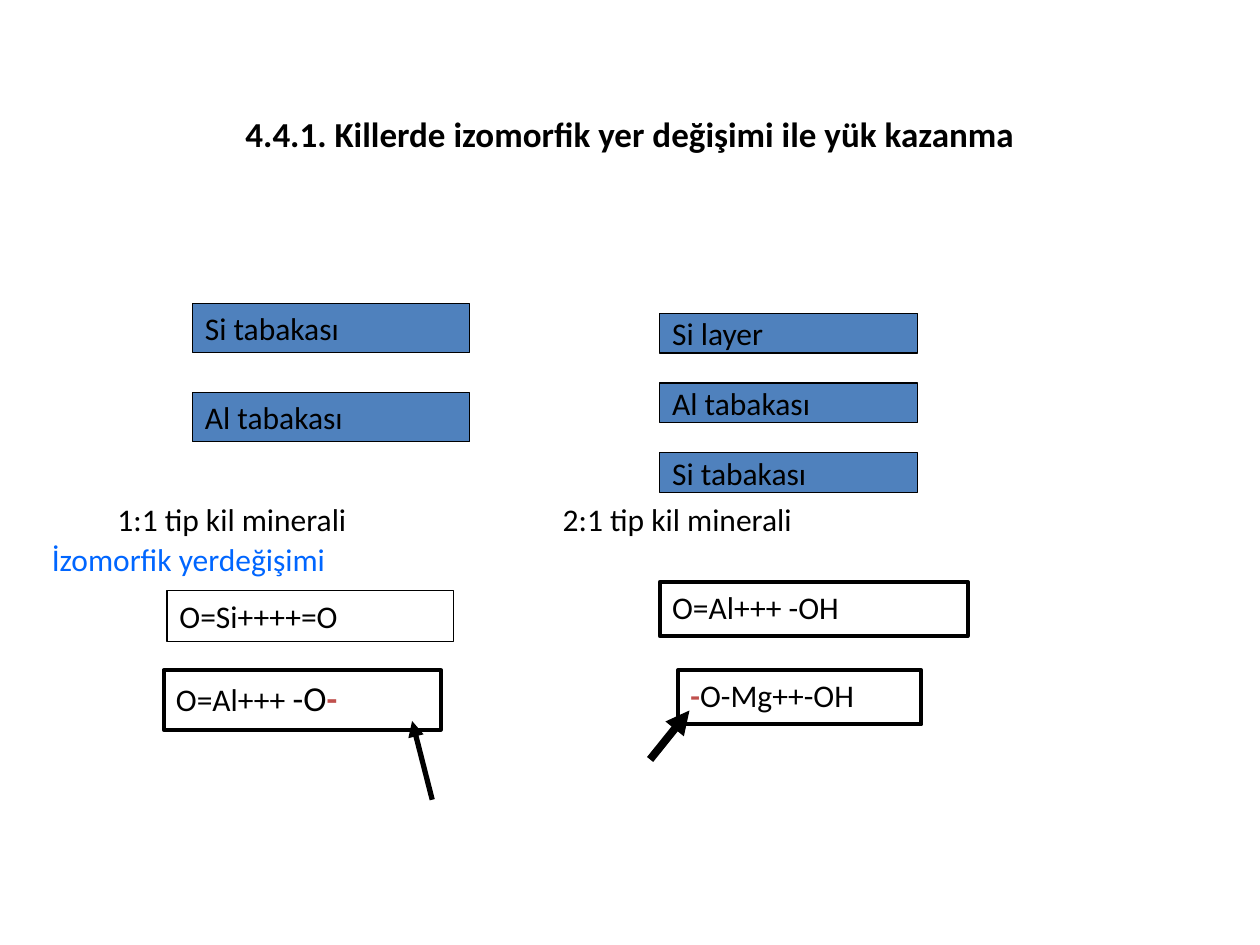
from lxml import etree
from pptx import Presentation
from pptx.dml.color import RGBColor
from pptx.enum.shapes import MSO_CONNECTOR, MSO_SHAPE
from pptx.enum.text import MSO_ANCHOR, PP_ALIGN
from pptx.oxml.ns import qn
from pptx.util import Pt

RECTANGLE = MSO_SHAPE.RECTANGLE
STRAIGHT = MSO_CONNECTOR.STRAIGHT
MIDDLE, TOP = MSO_ANCHOR.MIDDLE, MSO_ANCHOR.TOP
LEFT, CENTER = PP_ALIGN.LEFT, PP_ALIGN.CENTER

BLACK, BLUE, RED, LINK_BLUE = "000000", "4F81BD", "C0504D", "0066FF"
FONT = "Calibri"
CHARGE = {"bold": True, "color": RED}


def rgb(value):
    return RGBColor.from_string(value)


def write(shape, pieces, anchor=TOP, align=LEFT):
    """Write one paragraph from (text, format) pieces."""
    frame = shape.text_frame
    frame.word_wrap = True
    frame.vertical_anchor = anchor
    paragraph = frame.paragraphs[0]
    paragraph.alignment = align
    for text, changes in pieces:
        run = paragraph.add_run()
        run.text = text
        style = {"name": FONT, "size": Pt(18), "bold": False, "color": BLACK, **changes}
        run.font.color.rgb = rgb(style.pop("color"))
        for attribute, value in style.items():
            setattr(run.font, attribute, value)


def add_box(slide, box, pieces, fill=None, weight=0.75, anchor=TOP):
    rectangle = slide.shapes.add_shape(RECTANGLE, *map(Pt, box))
    rectangle.shadow.inherit = False
    if fill:
        rectangle.fill.solid()
        rectangle.fill.fore_color.rgb = rgb(fill)
    else:
        rectangle.fill.background()
    rectangle.line.color.rgb = rgb(BLACK)
    rectangle.line.width = Pt(weight)
    write(rectangle, pieces, anchor)


def add_label(slide, box, text, color=BLACK):
    label = slide.shapes.add_textbox(*map(Pt, box))
    write(label, [(text, {"color": color})])


def add_arrow(slide, start, end, weight):
    arrow = slide.shapes.add_connector(STRAIGHT, *map(Pt, start + end))
    arrow.line.color.rgb = rgb(BLACK)
    arrow.line.width = Pt(weight)
    etree.SubElement(arrow.line._get_or_add_ln(), qn("a:tailEnd"), type="triangle")
    etree.SubElement(arrow._element.spPr, qn("a:effectLst"))


def add_title(slide, box, text):
    title = slide.shapes.title
    for attribute, value in zip(("left", "top", "width", "height"), box):
        setattr(title, attribute, Pt(value))
    write(title, [(text, {"size": Pt(20), "bold": True})], MIDDLE, CENTER)


def add_layers(slide, box, names, layer_height):
    """Spread the layers evenly from the top to the bottom of the box."""
    left, top, width, height = box
    pitch = (height - layer_height) / (len(names) - 1)
    for index, name in enumerate(names):
        layer = (left, top + index * pitch, width, layer_height)
        add_box(slide, layer, [(name, {})], BLUE, anchor=MIDDLE)


def add_substitution(slide, box, formulas, arrow):
    """Place formulas (offset, size, weight, pieces) and the arrow in the box."""
    left, top = box
    for (dx, dy), size, weight, pieces in formulas:
        add_box(slide, (left + dx, top + dy, *size), pieces, weight=weight)
    (x1, y1), (x2, y2), weight = arrow
    add_arrow(slide, (left + x1, top + y1), (left + x2, top + y2), weight)


def main():
    presentation = Presentation()
    presentation.slide_width, presentation.slide_height = Pt(720), Pt(540)
    slide = presentation.slides.add_slide(presentation.slide_layouts[5])

    add_title(slide, (45, 28, 630, 96),
              "4.4.1. Killerde izomorfik yer değişimi ile yük kazanma")

    # Clay layers and their mineral types
    add_layers(slide, (110, 173.5, 158.5, 79), ["Si tabakası", "Al tabakası"], 28)
    add_layers(slide, (377, 179, 147.5, 102.5),
               ["Si layer", "Al tabakası", "Si tabakası"], 22.8)
    add_label(slide, (60, 282, 181, 29), "1:1 tip kil minerali")
    add_label(slide, (314.5, 282, 232.5, 29), "2:1 tip kil minerali")

    # Silicon replaced by aluminium
    add_label(slide, (22.5, 305, 315, 29), "İzomorfik yerdeğişimi", LINK_BLUE)
    add_substitution(slide, (93.5, 337.5), [
        ((2, 0), (163.5, 29), 0.75, [("O=Si++++=O", {})]),
        ((0, 45.5), (158.5, 34), 2.25,
         [("O=Al+++ ", {}), ("-O", {"size": Pt(20)}), ("-", {"size": Pt(20), **CHARGE})]),
    ], ((153.5, 119.5), (142, 74.5), 3))

    # Aluminium replaced by magnesium
    add_substitution(slide, (377, 332.5), [
        ((0, 0), (176, 31), 2.25, [("O=Al+++ -OH", {})]),
        ((10.5, 50.5), (139, 31), 2.25, [("-", CHARGE), ("O-Mg++-OH", {})]),
    ], ((-5.5, 101.5), (17, 73.5), 4.5))

    presentation.save("out.pptx")


if __name__ == "__main__":
    main()
